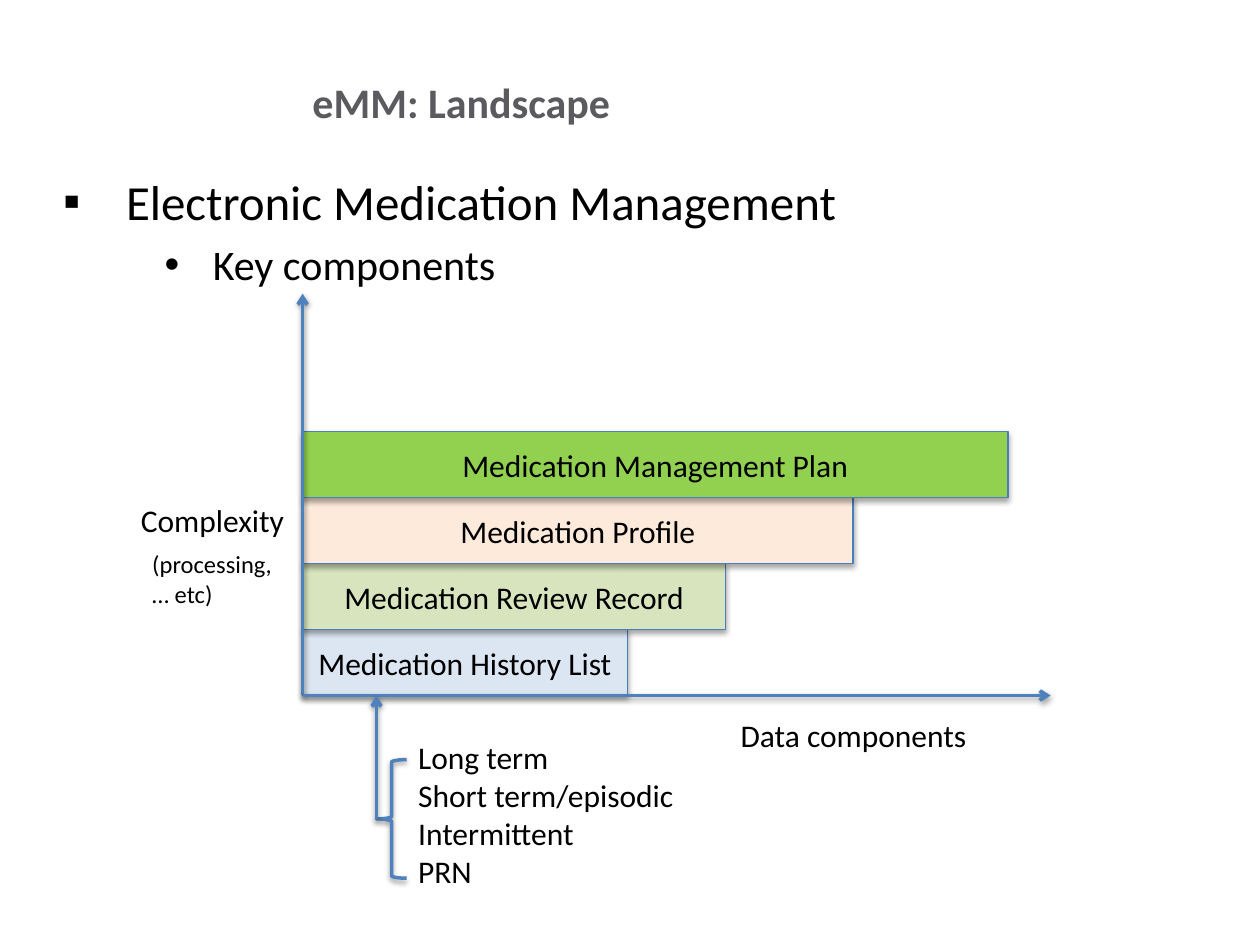
from lxml.etree import SubElement
from pptx import Presentation
from pptx.dml.color import RGBColor
from pptx.enum.shapes import MSO_CONNECTOR, MSO_SHAPE
from pptx.enum.text import MSO_ANCHOR, MSO_AUTO_SIZE, PP_ALIGN
from pptx.oxml.ns import qn
from pptx.util import Cm, Pt

BLACK = RGBColor(0x00, 0x00, 0x00)
GREY = RGBColor(0x5B, 0x5A, 0x5F)
BLUE = RGBColor(0x4F, 0x81, 0xBD)
EDGE = RGBColor(0x4B, 0x7E, 0xBC)
PALE = RGBColor(0xDC, 0xE6, 0xF2)
SAGE = RGBColor(0xD7, 0xE4, 0xBD)
PEACH = RGBColor(0xFD, 0xEA, 0xDA)
GREEN = RGBColor(0x92, 0xD0, 0x50)

LEFT, BASE, STEP = 6.1, 14.02, 1.33
STEM, MID = 7.59, 16.51
BARS = [
    ("Medication History List", 6.55, PALE),
    ("Medication Review Record", 8.53, SAGE),
    ("Medication Profile", 11.1, PEACH),
    ("Medication Management Plan", 14.22, GREEN),
]
LABELS = [
    (2.59, 9.98, 3.58, 1.02, 18, "Complexity"),
    (14.68, 14.3, 5.13, 1.02, 18, "Data components"),
    (2.82, 10.95, 2.95, 1.45, 14, "(processing,\n… etc)"),
    (8.18, 14.76, 5.72, 3.33, 18,
     "Long term\nShort term/episodic\nIntermittent\nPRN"),
]
POINTS = [
    ("Electronic Medication Management", 28, "▪", 1.27, -1.27),
    ("Key components", 24, "•", 3.02, -0.97),
]


def style(para, size, color=BLACK, bold=False):
    """Set the font of a whole paragraph."""
    font = para.font
    font.name, font.size, font.bold = "Calibri", Pt(size), bold
    font.color.rgb = color


def shade(shape, alpha, dist):
    """Give a shape a soft shadow that falls straight down."""
    glow = SubElement(shape._element.spPr, qn("a:effectLst"))
    drop = SubElement(glow, qn("a:outerShdw"), blurRad=str(Pt(3.1)),
                      dist=str(Pt(dist)), dir="5400000", rotWithShape="0")
    tint = SubElement(drop, qn("a:srgbClr"), val="000000")
    SubElement(tint, qn("a:alpha"), val=str(alpha * 1000))


def place(shape, left, top, width, height):
    """Move and size a placeholder and set its margins."""
    shape.left, shape.top = Cm(left), Cm(top)
    shape.width, shape.height = Cm(width), Cm(height)
    frame = shape.text_frame
    frame.auto_size = MSO_AUTO_SIZE.NONE
    frame.margin_left = frame.margin_bottom = 0
    frame.margin_right, frame.margin_top = Cm(0.25), Cm(0.13)
    return frame


def add_title(slide):
    """Fill the title."""
    frame = place(slide.shapes.title, 1.27, 0.99, 16.31, 1.57)
    frame.text = "eMM: Landscape"
    frame.vertical_anchor = MSO_ANCHOR.BOTTOM
    para = frame.paragraphs[0]
    para.alignment = PP_ALIGN.CENTER
    style(para, 24, GREY, True)


def add_list(slide):
    """Fill the body with its two bullet levels."""
    frame = place(slide.placeholders[1], 1.27, 3.33, 23.29, 3.33)
    frame.text = "\n".join(point[0] for point in POINTS)
    for level, para in enumerate(frame.paragraphs):
        size, mark, margin, indent = POINTS[level][1:]
        para.level = level
        props = para._p.get_or_add_pPr()
        props.set("marL", str(Cm(margin)))
        props.set("indent", str(Cm(indent)))
        SubElement(props, qn("a:buFont"), typeface="Arial")
        SubElement(props, qn("a:buChar"), char=mark)
        style(para, size)


def add_bar(slide, row, text, width, color):
    """Add one bar of the stack, counted from the base."""
    bar = slide.shapes.add_shape(
        MSO_SHAPE.RECTANGLE, Cm(LEFT), Cm(BASE - (row + 1) * STEP),
        Cm(width), Cm(STEP))
    bar.fill.solid()
    bar.fill.fore_color.rgb = color
    bar.line.color.rgb, bar.line.width = EDGE, Pt(0.75)
    shade(bar, 35, 1.8)
    frame = bar.text_frame
    frame.text = text
    frame.vertical_anchor = MSO_ANCHOR.MIDDLE
    para = frame.paragraphs[0]
    para.alignment = PP_ALIGN.CENTER
    style(para, 18)


def add_arrow(slide, *ends):
    """Add a straight arrow from x, y to x, y."""
    arrow = slide.shapes.add_connector(
        MSO_CONNECTOR.STRAIGHT, *(Cm(end) for end in ends))
    arrow.line.color.rgb, arrow.line.width = BLUE, Pt(2)
    SubElement(arrow.line._get_or_add_ln(), qn("a:tailEnd"), type="arrow")
    shade(arrow, 38, 1.6)


def add_brace(slide):
    """Add the brace beside the list of terms."""
    height = 2.39
    brace = slide.shapes.add_shape(
        MSO_SHAPE.LEFT_BRACE, Cm(STEM), Cm(MID - height / 2),
        Cm(0.61), Cm(height))
    brace.fill.background()
    brace.line.color.rgb, brace.line.width = BLUE, Pt(2)
    shade(brace, 38, 1.6)


def add_label(slide, left, top, width, height, size, text):
    """Add a text box that does not wrap."""
    box = slide.shapes.add_textbox(Cm(left), Cm(top), Cm(width), Cm(height))
    frame = box.text_frame
    frame.word_wrap = False
    frame.auto_size = MSO_AUTO_SIZE.SHAPE_TO_FIT_TEXT
    frame.text = text
    for para in frame.paragraphs:
        style(para, size)


def main():
    """Build the slide and save it."""
    deck = Presentation()
    deck.slide_width, deck.slide_height = Cm(25.4), Cm(19.05)
    slide = deck.slides.add_slide(deck.slide_layouts[1])
    add_list(slide)
    add_title(slide)
    for row, bar in enumerate(BARS):
        add_bar(slide, row, *bar)
    add_arrow(slide, LEFT, BASE, LEFT, 5.92)
    add_arrow(slide, LEFT, BASE, 21.18, BASE)
    for label in LABELS:
        add_label(slide, *label)
    add_brace(slide)
    add_arrow(slide, STEM, MID, STEM, BASE)
    deck.save("out.pptx")


if __name__ == "__main__":
    main()
